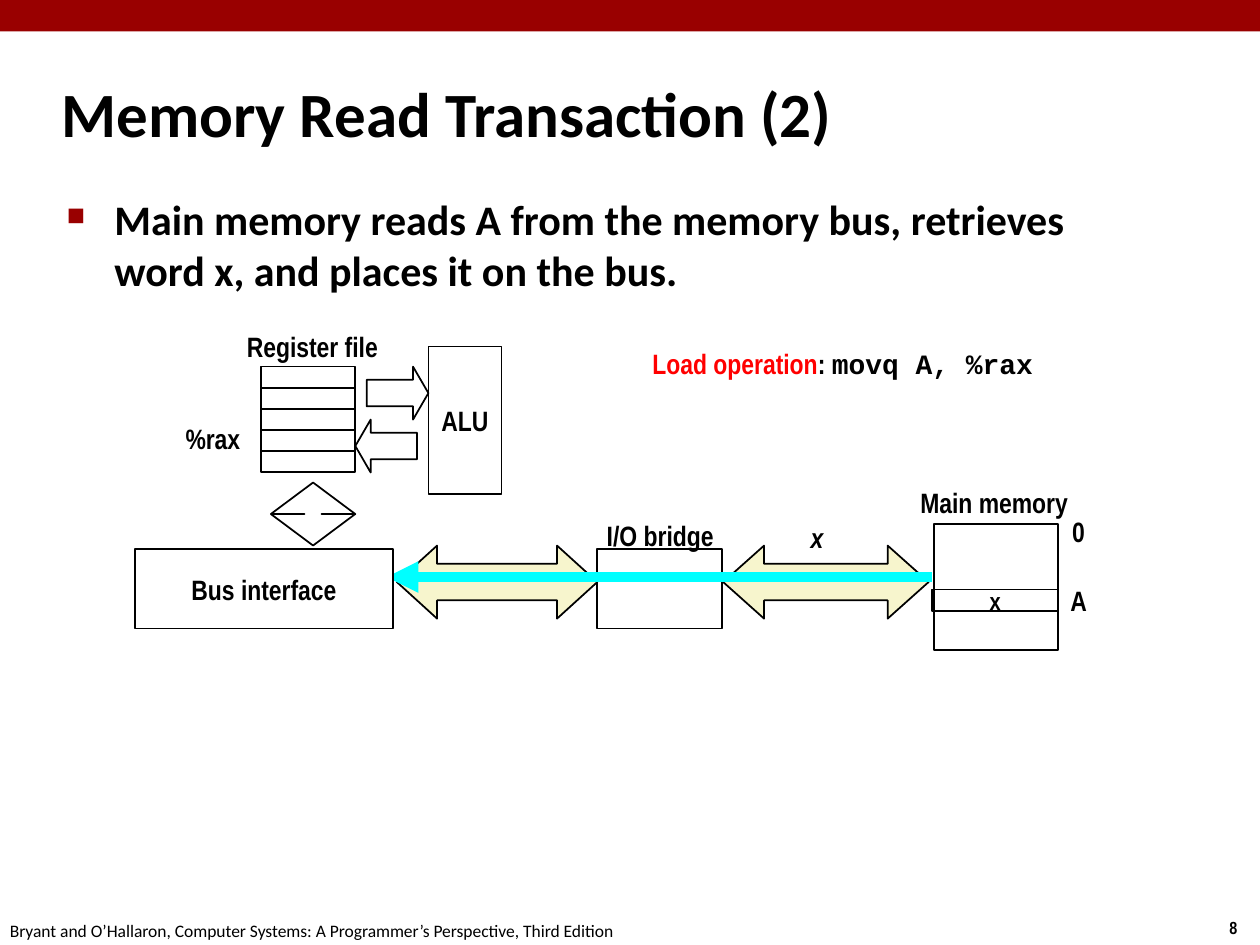
"""Build the slide on the second step of a memory read transaction."""
from lxml import etree
from pptx import Presentation
from pptx.dml.color import RGBColor
from pptx.enum.shapes import MSO_CONNECTOR, MSO_SHAPE as Shape
from pptx.enum.text import MSO_ANCHOR as Anchor, PP_ALIGN as Align
from pptx.oxml.ns import qn
from pptx.util import Inches, Pt

COLORS = {"band": "990000", "ink": "000000", "bus": "F7F5CD",
          "signal": "00FFFF", "accent": "FF0000", "paper": "FFFFFF"}
COLORS = {name: RGBColor.from_string(value) for name, value in COLORS.items()}


def write(box, text, size=16, font="Arial Narrow", bold=True,
          align=Align.CENTER, anchor=Anchor.MIDDLE, wrap=False):
    frame = box.text_frame
    frame.word_wrap = wrap
    frame.vertical_anchor = anchor
    para = frame.paragraphs[0]
    para.alignment = align
    para.font.size = Pt(size)
    para.font.name = font
    para.font.bold = bold
    para.font.color.rgb = COLORS["ink"]
    if text:
        para.add_run().text = text
    return para


def draw(kind, place, fill=None, outline="ink", adjust=()):
    shape = page.shapes.add_shape(kind, *map(Inches, place))
    shape.shadow.inherit = False
    if fill:
        shape.fill.solid()
        shape.fill.fore_color.rgb = COLORS[fill]
    else:
        shape.fill.background()
    if outline:
        shape.line.color.rgb = COLORS[outline]
        shape.line.width = Pt(1)
    else:
        shape.line.fill.background()
    for index, value in enumerate(adjust):
        shape.adjustments[index] = value
    return shape


deck = Presentation()
deck.slide_width, deck.slide_height = Inches(10), Inches(7.5)
page = deck.slides.add_slide(deck.slide_layouts[6])

draw(Shape.RECTANGLE, (0, 0, 10, 0.25), "band", None)

texts = [
    ("8", (9.66, 7.23, 0.34, 0.27),
     dict(size=10, align=Align.LEFT, anchor=Anchor.TOP)),
    ("Bryant and O’Hallaron, Computer Systems: A Programmer’s Perspective, Third Edition",
     (-0.02, 7.25, 5.08, 0.27),
     dict(size=10, font="Calibri", bold=False, align=Align.LEFT, anchor=Anchor.TOP)),
    ("Memory Read Transaction (2)", (0.39, 0.48, 8.3, 0.83),
     dict(size=36, font="Calibri", align=Align.LEFT, wrap=True)),
]
for text, place, style in texts:
    write(page.shapes.add_textbox(*map(Inches, place)), text, **style)

body = page.shapes.add_textbox(Inches(0.43), Inches(1.49), Inches(8.64), Inches(5.44))
para = write(body, "Main memory reads A from the memory bus, retrieves word x, "
             "and places it on the bus.", 24, "Calibri",
             align=Align.LEFT, anchor=Anchor.TOP, wrap=True)
para.space_before = Pt(4.8)
props = para._p.get_or_add_pPr()
props.set("marL", str(Inches(0.38)))
props.set("indent", str(-Inches(0.38)))
bullet_color = etree.Element(qn("a:buClr"))
etree.SubElement(bullet_color, qn("a:srgbClr"), val=str(COLORS["band"]))
bullet_size = etree.Element(qn("a:buSzPct"), val="60000")
bullet = etree.Element(qn("a:buChar"), char="■")
position = props.index(props.find(qn("a:spcBef"))) + 1
props[position:position] = [bullet_color, bullet_size, bullet]

draw(Shape.LEFT_RIGHT_ARROW, (5.74, 4.33, 1.63, 0.58), "bus", adjust=(0.5, 0.56))
draw(Shape.RECTANGLE, (4.74, 4.36, 0.99, 0.63))
draw(Shape.LEFT_RIGHT_ARROW, (3.15, 4.33, 1.59, 0.58), "bus", adjust=(0.5, 0.55))

for row in range(5):
    draw(Shape.RECTANGLE, (2.07, 2.91 + row / 6, 0.75, 0.17))
draw(Shape.RIGHT_ARROW, (2.91, 2.91, 0.49, 0.42), adjust=(0.5, 0.29))
draw(Shape.LEFT_ARROW, (2.82, 3.33, 0.49, 0.42), adjust=(0.5, 0.29))
write(draw(Shape.RECTANGLE, (3.4, 2.75, 0.58, 1.17)), "ALU")
draw(Shape.UP_DOWN_ARROW, (2.15, 3.83, 0.67, 0.5), adjust=(0.5, 0.2))

signal = page.shapes.add_connector(
    MSO_CONNECTOR.STRAIGHT, Inches(3.07), Inches(4.58), Inches(7.4), Inches(4.58))
signal.line.color.rgb = COLORS["signal"]
signal.line.width = Pt(6)
etree.SubElement(signal.line._get_or_add_ln(), qn("a:headEnd"), type="triangle")
etree.SubElement(signal._element.spPr, qn("a:effectLst"))

write(draw(Shape.RECTANGLE, (1.07, 4.36, 2.05, 0.63), "paper"), "Bus interface")
draw(Shape.RECTANGLE, (7.41, 4.16, 0.99, 1))
write(draw(Shape.RECTANGLE, (7.4, 4.68, 1, 0.17)), "x", 14)

labels = [
    ("Register file", 1.85, 2.56, 1.26),
    ("%rax", 1.37, 3.29, 0.64),
    ("I/O bridge", 4.71, 4.06, 1.06),
    ("Main memory", 7.17, 3.8, 1.44),
    ("0", 8.4, 4.03, 0.32),
    ("A", 8.38, 4.58, 0.36),
    ("x", 6.31, 4.08, 0.35),
]
for text, left, top, width in labels:
    box = page.shapes.add_textbox(Inches(left), Inches(top), Inches(width), Inches(0.37))
    para = write(box, text)
para.font.italic = True

box = page.shapes.add_textbox(Inches(5.08), Inches(2.7), Inches(3.26), Inches(0.64))
para = write(box, "", align=Align.LEFT, anchor=Anchor.TOP)
for text, font, color in [("Load operation", "Arial Narrow", "accent"),
                          (": ", "Arial Narrow", "ink"),
                          ("movq A, %rax", "Courier New", "ink")]:
    span = para.add_run()
    span.text = text
    span.font.name = font
    span.font.color.rgb = COLORS[color]

deck.save("out.pptx")
